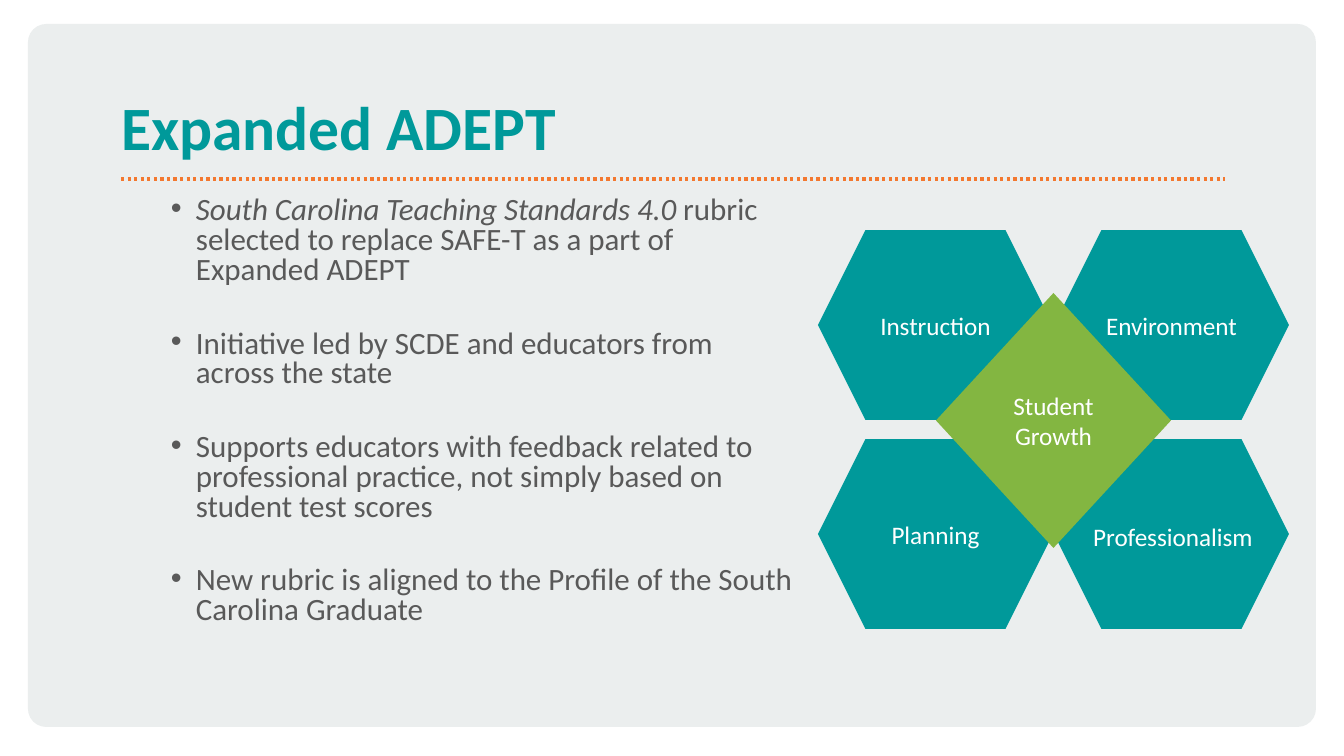
from itertools import product
from lxml.etree import SubElement
from pptx import Presentation
from pptx.dml.color import RGBColor
from pptx.enum.dml import MSO_LINE
from pptx.enum.shapes import MSO_CONNECTOR, MSO_SHAPE
from pptx.enum.text import MSO_ANCHOR, MSO_AUTO_SIZE, PP_ALIGN
from pptx.oxml.ns import qn
from pptx.util import Emu, Pt

SCALE = 914400 / 134.4  # EMU in one px
TEAL, GREEN, ORANGE = "00999A", "83B641", "F3782F"
PANEL, GREY, WHITE = "EBEEEE", "595959", "FFFFFF"


def px(n):
    return Emu(round(n * SCALE))


def color(code):
    return RGBColor.from_string(code)


class Deck:
    font = "Calibri"

    def __init__(self, wide, high):
        self.prs = Presentation()
        self.prs.slide_width, self.prs.slide_height = px(wide), px(high)
        self.slide = self.prs.slides.add_slide(self.prs.slide_layouts[5])
        self.shapes = self.slide.shapes

    def frame(self, shape, **style):
        frame = shape.text_frame
        frame.word_wrap = True
        frame.auto_size = MSO_AUTO_SIZE.NONE
        for name, value in style.items():
            setattr(frame, name, value)
        return frame

    def flush(self, shape, anchor):
        sides = ("left", "top", "right", "bottom")
        style = {f"margin_{side}": 0 for side in sides}
        return self.frame(shape, vertical_anchor=anchor, **style)

    def words(self, para, text, size, code, **style):
        run = para.add_run()
        run.text = text
        look = {"name": self.font, "size": Pt(size), **style}
        for name, value in look.items():
            setattr(run.font, name, value)
        run.font.color.rgb = color(code)

    def title(self, text, *box):
        shape = self.shapes.title
        shape.left, shape.top, shape.width, shape.height = map(px, box)
        para = self.flush(shape, MSO_ANCHOR.BOTTOM).paragraphs[0]
        para.alignment, para.line_spacing = PP_ALIGN.LEFT, 0.85
        self.words(para, text, 33, TEAL, bold=True)

    def shape(self, kind, fill, *box, text=""):
        shape = self.shapes.add_shape(kind, *map(px, box))
        shape.shadow.inherit = False
        shape.fill.solid()
        shape.fill.fore_color.rgb = color(fill)
        shape.line.fill.background()
        if text:
            frame = self.frame(shape, vertical_anchor=MSO_ANCHOR.MIDDLE)
            para = frame.paragraphs[0]
            para.alignment = PP_ALIGN.CENTER
            self.words(para, text, 13.5, WHITE)
        return shape

    def panel(self, *box):
        panel = self.shape(MSO_SHAPE.ROUNDED_RECTANGLE, PANEL, *box)
        panel.adjustments[0] = 0.026
        # Keep the panel behind the title
        self.shapes.title.element.addprevious(panel.element)

    def rule(self, *ends):
        rule = self.shapes.add_connector(MSO_CONNECTOR.STRAIGHT, *map(px, ends))
        rule.line.color.rgb = color(ORANGE)
        rule.line.width = Pt(1.75)
        rule.line.dash_style = MSO_LINE.ROUND_DOT
        SubElement(rule.element.spPr, qn("a:effectLst"))

    def label(self, text, *box):
        frame = self.frame(self.shapes.add_textbox(*map(px, box)))
        self.words(frame.paragraphs[0], text, 13.5, WHITE)

    def bullets(self, items, *box):
        shape = self.shapes.add_textbox(*map(px, box))
        frame = self.flush(shape, MSO_ANCHOR.TOP)
        for i, (lead, rest) in enumerate(items):
            para = frame.add_paragraph() if i else frame.paragraphs[0]
            props = para._p.get_or_add_pPr()
            props.set("marL", str(px(75)))
            props.set("indent", str(px(-25)))
            SubElement(props, qn("a:buFont"), typeface="Arial")
            SubElement(props, qn("a:buChar"), char="•")
            para.line_spacing = 0.8
            if i:
                para.space_before = Pt(23.6)
            if lead:
                self.words(para, lead, 16.6, GREY, italic=True)
            self.words(para, rest, 16.6, GREY)


def main():
    deck = Deck(1344, 756)

    # Panel, title and dotted rule
    deck.panel(28, 24, 1288, 703)
    deck.title("Expanded ADEPT", 121, 22, 1102, 141)
    deck.rule(121, 179, 1225, 179)

    # Points on the left
    deck.bullets([
        ("South Carolina Teaching Standards 4.0",
         " rubric selected to replace SAFE-T as a part of Expanded ADEPT"),
        ("", "Initiative led by SCDE and educators from across the state"),
        ("", "Supports educators with feedback related to professional "
             "practice, not simply based on student test scores"),
        ("", "New rubric is aligned to the Profile of the "
             "South Carolina Graduate"),
    ], 121, 197, 672, 470)

    # Four domains in a two by two grid; the last has its own label
    names = ("Instruction", "Environment", "Planning", "")
    for name, (row, col) in zip(names, product(range(2), repeat=2)):
        deck.shape(MSO_SHAPE.HEXAGON, TEAL, 818 + 236 * col,
                   230 + 209 * row, 235, 190, text=name)
    deck.label("Professionalism", 1080, 515, 199, 44)

    # Shared goal in the centre
    deck.shape(MSO_SHAPE.DIAMOND, GREEN, 936, 293, 235, 255,
               text="Student Growth")

    deck.prs.save("out.pptx")


if __name__ == "__main__":
    main()
